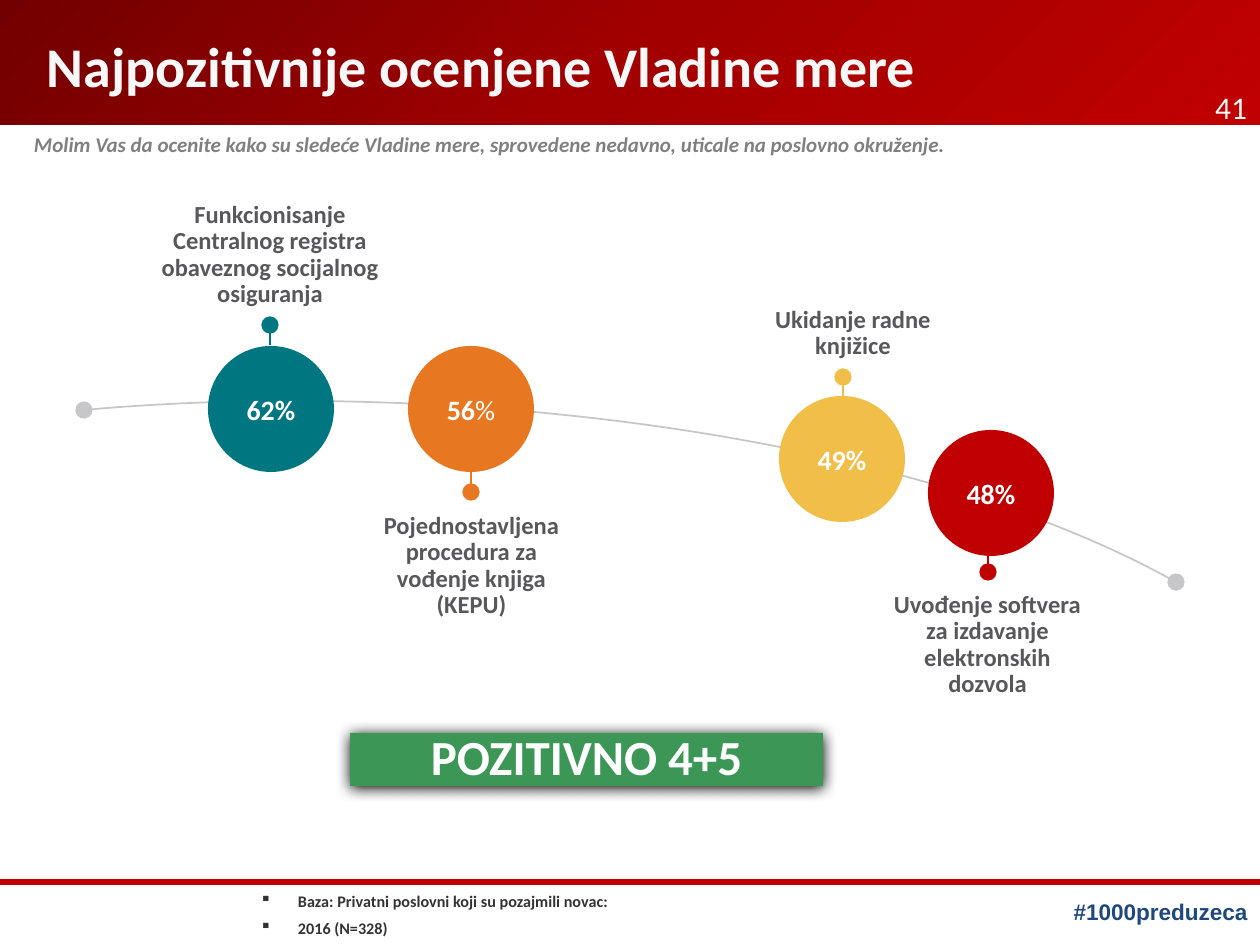
from lxml import etree
from pptx import Presentation
from pptx.dml.color import RGBColor
from pptx.enum.shapes import MSO_CONNECTOR, MSO_SHAPE
from pptx.enum.text import MSO_ANCHOR, PP_ALIGN
from pptx.oxml import parse_xml
from pptx.oxml.ns import nsdecls, qn
from pptx.util import Emu, Pt

PX = 914400 / 126
RECT, OVAL, STRAIGHT = MSO_SHAPE.RECTANGLE, MSO_SHAPE.OVAL, MSO_CONNECTOR.STRAIGHT
LEFT, CENTER, RIGHT = PP_ALIGN.LEFT, PP_ALIGN.CENTER, PP_ALIGN.RIGHT
JUSTIFY = PP_ALIGN.JUSTIFY
TOP, MIDDLE = MSO_ANCHOR.TOP, MSO_ANCHOR.MIDDLE

WHITE = RGBColor(0xFF, 0xFF, 0xFF)
OFF_WHITE = RGBColor(0xF8, 0xF8, 0xF8)
RED = RGBColor(0xC0, 0x00, 0x00)
TEAL = RGBColor(0x00, 0x76, 0x81)
ORANGE = RGBColor(0xE8, 0x77, 0x22)
YELLOW = RGBColor(0xF1, 0xBE, 0x48)
GREEN = RGBColor(0x3C, 0x96, 0x56)
NAVY = RGBColor(0x1F, 0x49, 0x7D)
SILVER = RGBColor(0xC7, 0xC7, 0xC9)
GRAY = RGBColor(0x80, 0x80, 0x80)
DARK_GRAY = RGBColor(0x58, 0x58, 0x5B)
CHARCOAL = RGBColor(0x33, 0x33, 0x33)

HEADER_STOPS = ((0, "720000"), (50000, "A20000"), (100000, "C00000"))
DIAMETER = 126
MEASURES = (
    ("62", "%", True, TEAL, (208, 346), (270, 345, 325),
     "Funkcionisanje Centralnog registra obaveznog socijalnog osiguranja",
     (156, 202, 228, 107)),
    ("56", "%", False, ORANGE, (408, 346), (471, 472, 492),
     "Pojednostavljena procedura za vođenje knjiga (KEPU)",
     (367, 513, 209, 107)),
    ("48", "%", True, RED, (928, 430), (988, 552, 572),
     "Uvođenje softvera za izdavanje elektronskih dozvola",
     (883, 592, 209, 107)),
    ("49", "%", True, YELLOW, (779, 396), (843, 397, 377),
     "Ukidanje radne knjižice", (756, 307, 194, 53)),
)


def px(length):
    """Turn pixels into EMU."""
    return Emu(round(length * PX))


def write_text(shape, text, size, color, font="Calibri", bold=True, italic=False,
               align=LEFT, anchor=TOP, spacing=1.0, before=0, inset=(0, 0),
               tail="", tail_bold=True):
    """Write one paragraph per line of text, with an optional tail run."""
    frame = shape.text_frame
    frame.word_wrap = True
    frame.vertical_anchor = anchor
    frame.margin_left = frame.margin_right = px(inset[0])
    frame.margin_top = frame.margin_bottom = px(inset[1])
    for index, line in enumerate(text.split("\n")):
        paragraph = frame.paragraphs[0] if index == 0 else frame.add_paragraph()
        paragraph.alignment = align
        paragraph.line_spacing = spacing
        paragraph.space_before = Pt(before)
        for words, weight in ((line, bold), (tail, tail_bold)):
            if words:
                run = paragraph.add_run()
                run.text = words
                run.font.name = font
                run.font.size = Pt(size)
                run.font.bold = weight
                run.font.italic = italic
                run.font.color.rgb = color
    return frame


def add_text(slide, box, text, **style):
    """Add a text box and return its frame."""
    return write_text(slide.shapes.add_textbox(*map(px, box)), text, **style)


def add_block(slide, kind, box, color):
    """Add a plain filled shape without outline or shadow."""
    block = slide.shapes.add_shape(kind, *map(px, box))
    block.shadow.inherit = False
    block.fill.solid()
    block.fill.fore_color.rgb = color
    block.line.fill.background()
    return block


def add_line(slide, start, end, color, width):
    """Add a straight line without shadow."""
    line = slide.shapes.add_connector(STRAIGHT, *map(px, start + end))
    line.line.color.rgb = color
    line.line.width = Pt(width)
    etree.SubElement(line._element.spPr, qn("a:effectLst"))
    return line


def add_dots(shape, *ends):
    """Put large oval ends on a line."""
    outline = shape.line._get_or_add_ln()
    for end in ends:
        etree.SubElement(outline, qn(f"a:{end}"), type="oval", w="lg", len="lg")


def add_header(slide, box):
    """Draw the gradient band with the title and page number."""
    left, top, width, height = box
    band = add_block(slide, RECT, box, RED)
    stops = "".join(f'<a:gs pos="{position}"><a:srgbClr val="{value}"/></a:gs>'
                    for position, value in HEADER_STOPS)
    gradient = parse_xml(
        f'<a:gradFill {nsdecls("a")} rotWithShape="1"><a:gsLst>{stops}</a:gsLst>'
        '<a:path path="circle"><a:fillToRect r="100000" b="100000"/></a:path>'
        '</a:gradFill>')
    properties = band._element.spPr
    properties.replace(properties.find(qn("a:solidFill")), gradient)
    add_text(slide, (left + 34, top + 19, 1153, 105),
             "Najpozitivnije ocenjene Vladine mere", size=32, color=OFF_WHITE,
             align=JUSTIFY, anchor=MIDDLE, spacing=0.8, inset=(13, 6))
    add_text(slide, (left + width - 72, top + height - 43, 72, 40), "41", size=18,
             color=OFF_WHITE, bold=False, align=RIGHT, inset=(13, 6))


def add_curve(slide, box):
    """Draw the arc behind the measures as a finely sampled cubic curve."""
    left, top, width, height = box
    controls = ((0, 9), (339, -22), (811, 24), (width, height))
    steps = 60
    points = []
    for step in range(steps + 1):
        t = step / steps
        weights = ((1 - t) ** 3, 3 * t * (1 - t) ** 2, 3 * t * t * (1 - t), t ** 3)
        x, y = (sum(w * c for w, c in zip(weights, axis)) for axis in zip(*controls))
        points.append((px(left + x), px(top + y)))
    builder = slide.shapes.build_freeform(*points[0])
    builder.add_line_segments(points[1:], close=False)
    arc = builder.convert_to_shape()
    arc.shadow.inherit = False
    arc.fill.background()
    arc.line.color.rgb = SILVER
    arc.line.width = Pt(1)
    add_dots(arc, "headEnd", "tailEnd")


def add_measures(slide, box):
    """Draw the arc and every measure with its circle, stem and label."""
    left, top = box[:2]
    add_curve(slide, (left + 84, top + 401, 1092, 181))
    for share, sign, sign_bold, color, corner, stem, label, place in MEASURES:
        circle = add_block(slide, OVAL, (left + corner[0], top + corner[1],
                                         DIAMETER, DIAMETER), color)
        write_text(circle, share, size=16, color=WHITE, align=CENTER,
                   anchor=MIDDLE, tail=sign, tail_bold=sign_bold)
        x, start, end = stem
        line = add_line(slide, (left + x, top + start), (left + x, top + end),
                        color, 0.75)
        add_dots(line, "tailEnd")
        add_text(slide, (left + place[0], top + place[1], *place[2:]), label,
                 size=14, color=DARK_GRAY, align=CENTER, spacing=0.9)


def add_banner(slide, box):
    """Draw the green banner with a soft shadow."""
    banner = add_block(slide, RECT, box, GREEN)
    banner._element.spPr.find(qn("a:effectLst")).append(parse_xml(
        f'<a:outerShdw {nsdecls("a")} blurRad="{Pt(8.5)}" dist="{Pt(1)}" '
        'dir="5400000" algn="t" rotWithShape="0"><a:srgbClr val="000000"/>'
        '</a:outerShdw>'))
    write_text(banner, "POZITIVNO 4+5", size=28, color=WHITE, align=CENTER,
               spacing=0.9)


def add_footer(slide, box):
    """Draw the rule, the bulleted sample note and the hashtag."""
    left, top, width, _ = box
    add_line(slide, (left, top), (left + width, top), RED, 3)
    note = add_text(slide, (left + 247, top + 3, 750, 58),
                    "Baza: Privatni poslovni koji su pozajmili novac:\n2016 (N=328)",
                    size=9.2, color=CHARCOAL, before=4.6, inset=(13, 6))
    for paragraph in note.paragraphs:
        properties = paragraph._p.get_or_add_pPr()
        properties.set("marL", str(px(38)))
        properties.set("indent", str(px(-38)))
        etree.SubElement(properties, qn("a:buChar"), char="▪")
    add_text(slide, (left + width - 199, top + 10, 199, 40), "#1000preduzeca",
             size=12.9, color=NAVY, font="Arial", align=CENTER, inset=(6, 6))


def main():
    """Build and save the slide."""
    deck = Presentation()
    deck.slide_width, deck.slide_height = px(1260), px(945)
    slide = deck.slides.add_slide(deck.slide_layouts[6])
    add_header(slide, (0, 0, 1260, 125))
    add_text(slide, (34, 134, 1192, 23),
             "Molim Vas da ocenite kako su sledeće Vladine mere, sprovedene "
             "nedavno, uticale na poslovno okruženje.",
             size=12, color=GRAY, italic=True, spacing=0.9, before=4.1)
    add_measures(slide, (0, 0, 1260, 700))
    add_banner(slide, (350, 733, 473, 53))
    add_footer(slide, (0, 882, 1260, 63))
    deck.save("out.pptx")


if __name__ == "__main__":
    main()
